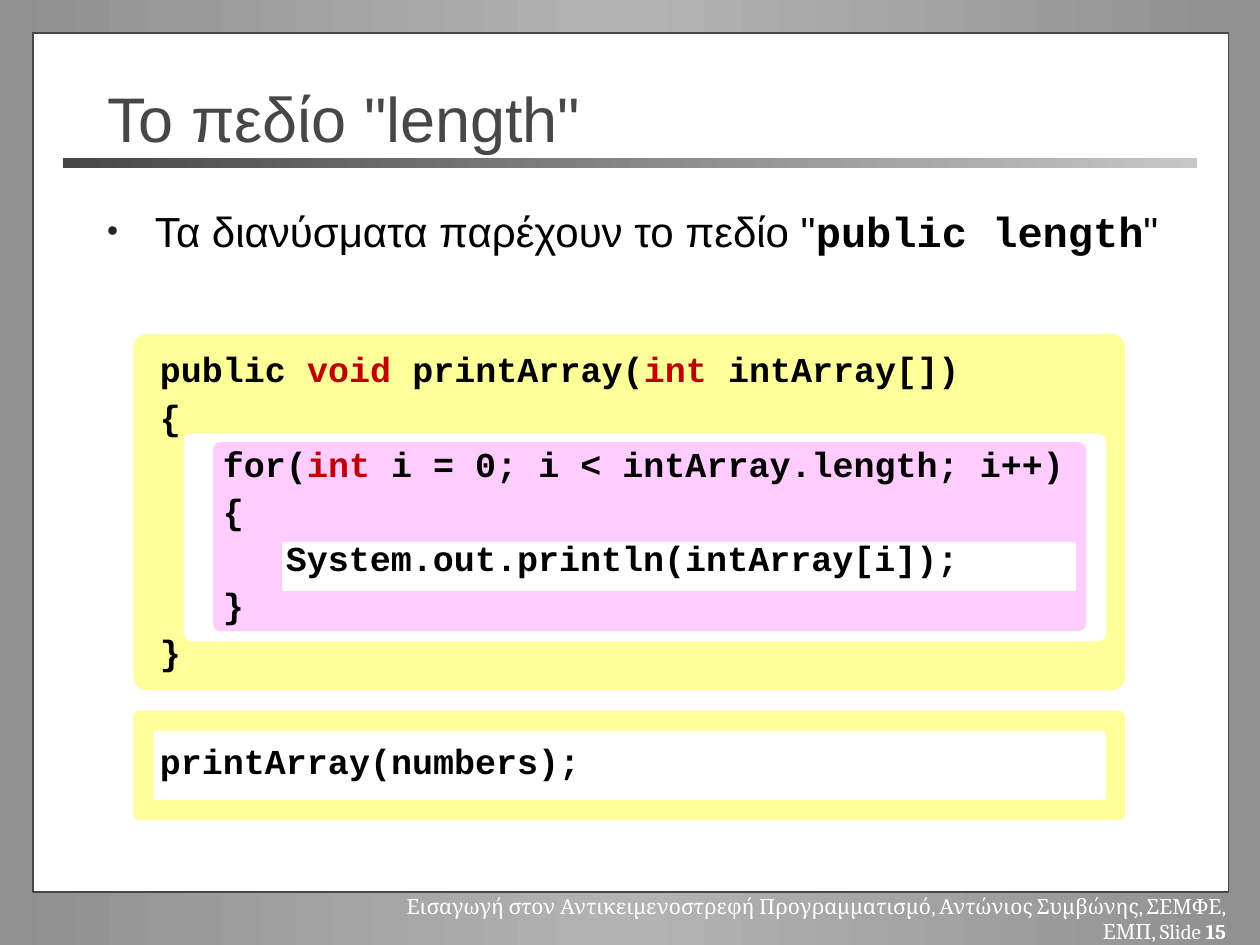
import copy
import pptx
import pptx.util
import pptx.dml.color
import pptx.enum.shapes
import pptx.enum.text
import pptx.oxml.ns
import lxml.etree

Inches = pptx.util.Inches
Pt = pptx.util.Pt
RGBColor = pptx.dml.color.RGBColor
SHAPES = pptx.enum.shapes.MSO_SHAPE
ALIGN = pptx.enum.text.PP_ALIGN
ANCHOR = pptx.enum.text.MSO_ANCHOR
AUTO_SIZE = pptx.enum.text.MSO_AUTO_SIZE

WHITE = RGBColor(0xFF, 0xFF, 0xFF)
BLACK = RGBColor(0, 0, 0)
DARK = RGBColor(0x47, 0x47, 0x47)
EDGE = RGBColor(0x90, 0x90, 0x90)
MIDDLE = RGBColor(0xB3, 0xB3, 0xB3)
PALE = RGBColor(0xC6, 0xC6, 0xC6)
YELLOW = RGBColor(0xFF, 0xFF, 0x99)
PINK = RGBColor(0xFF, 0xCC, 0xFF)
RED = RGBColor(0xC0, 0, 0)

TITLE = 'Το πεδίο "length"'
BULLET = [('Τα διανύσματα παρέχουν το πεδίο "', "Arial", False),
          ("public length", "Courier New", True),
          ('"', "Arial", False)]
FOOTER = ("Εισαγωγή στον Αντικειμενοστρεφή Προγραμματισμό, "
          "Αντώνιος Συμβώνης, ΣΕΜΦΕ, ΕΜΠ, Slide ")
SLIDE_NUMBER = "15"
METHOD = [
    (0, ["public ", "void ", "printArray(", "int ", "intArray[])"]),
    (0, ["{"]),
    (1, ["for(", "int ", "i = 0; i < intArray.length; i++)"]),
    (1, ["{"]),
    (2, ["System.out.println(intArray[i]);"]),
    (1, ["}"]),
    (0, ["}"]),
]
CALL = [(0, ["printArray(numbers);"])]
TYPE_WORDS = {"void ", "int "}
PANELS = [
    ((1.06, 5.64, 7.87, 0.87), 0.06, YELLOW),
    ((1.22, 5.8, 7.56, 0.55), 0.04, WHITE),
    ((1.06, 2.65, 7.87, 2.83), 0.04, YELLOW),
    ((1.46, 3.44, 7.32, 1.65), 0.04, WHITE),
    ((1.69, 3.51, 6.93, 1.5), 0.04, PINK),
    ((2.24, 4.3, 6.3, 0.39), 0.04, WHITE),
]
INDENT = 0.5


def box(numbers):
    return [Inches(number) for number in numbers]


def place(shape, numbers):
    shape.left, shape.top, shape.width, shape.height = box(numbers)


def add_panel(slide, kind, numbers, color):
    shape = slide.shapes.add_shape(kind, *box(numbers))
    shape.shadow.inherit = False
    shape.fill.solid()
    shape.fill.fore_color.rgb = color
    shape.line.fill.background()
    return shape


def set_gradient(fill, first, last):
    fill.gradient()
    fill.gradient_angle = 0
    for stop, color, position in zip(fill.gradient_stops, (first, last), (0, 1)):
        stop.color.rgb = color
        stop.position = position


def set_font(font, name, size, color, bold=False):
    font.name, font.size, font.bold = name, Pt(size), bold
    font.color.rgb = color


def set_indent(paragraph, left, first=0):
    properties = paragraph._p.get_or_add_pPr()
    properties.set("marL", str(Inches(left)))
    properties.set("indent", str(Inches(first)))
    return properties


def add_text_box(slide, numbers):
    frame = slide.shapes.add_textbox(*box(numbers)).text_frame
    frame.word_wrap = True
    return frame


def add_code(slide, numbers, lines):
    frame = add_text_box(slide, numbers)
    for index, (level, pieces) in enumerate(lines):
        paragraph = frame.add_paragraph() if index else frame.paragraphs[0]
        paragraph.line_spacing = 0.9
        paragraph.space_before = Pt(5.3)
        set_indent(paragraph, level * INDENT)
        set_font(paragraph.font, "Courier New", 20, BLACK, True)
        for piece in pieces:
            run = paragraph.add_run()
            run.text = piece
            if piece in TYPE_WORDS:
                run.font.color.rgb = RED


def add_background(slide):
    fill = slide.background.fill
    set_gradient(fill, EDGE, EDGE)
    stops = slide.background._cSld.find(".//" + pptx.oxml.ns.qn("a:gsLst"))
    stops.insert(1, copy.deepcopy(stops[0]))
    middle = fill.gradient_stops[1]
    middle.position = 0.5
    middle.color.rgb = MIDDLE


def add_title(slide):
    title = slide.shapes.title
    place(title, (0.75, 0.62, 8.5, 0.62))
    title.text_frame.text = TITLE
    title.text_frame.auto_size = AUTO_SIZE.NONE
    title.text_frame.vertical_anchor = ANCHOR.MIDDLE
    paragraph = title.text_frame.paragraphs[0]
    paragraph.alignment = ALIGN.LEFT
    set_font(paragraph.font, "Arial", 36, DARK)


def add_bullet(slide):
    body = slide.placeholders[1]
    place(body, (0.75, 1.58, 8.75, 0.75))
    body.text_frame.auto_size = AUTO_SIZE.NONE
    paragraph = body.text_frame.paragraphs[0]
    paragraph.space_before = Pt(5)
    properties = set_indent(paragraph, 0.38, -0.38)
    color = lxml.etree.SubElement(properties, pptx.oxml.ns.qn("a:buClr"))
    lxml.etree.SubElement(color, pptx.oxml.ns.qn("a:srgbClr"), val="232323")
    lxml.etree.SubElement(properties, pptx.oxml.ns.qn("a:buSzPct"), val="75000")
    lxml.etree.SubElement(properties, pptx.oxml.ns.qn("a:buChar"), char="•")
    for text, name, bold in BULLET:
        run = paragraph.add_run()
        run.text = text
        set_font(run.font, name, 24, BLACK, bold)


def add_footer(slide):
    paragraph = add_text_box(slide, (2.83, 7.04, 7, 0.3)).paragraphs[0]
    paragraph.alignment = ALIGN.RIGHT
    set_font(paragraph.font, "Cambria", 12, WHITE)
    paragraph.add_run().text = FOOTER
    number = paragraph.add_run()
    number.text = SLIDE_NUMBER
    number.font.bold = True


def main():
    presentation = pptx.Presentation()
    presentation.slide_width, presentation.slide_height = box((10, 7.5))
    slide = presentation.slides.add_slide(presentation.slide_layouts[1])
    add_background(slide)
    page = add_panel(slide, SHAPES.RECTANGLE, (0.26, 0.26, 9.49, 6.82), WHITE)
    page.line.color.rgb = DARK
    page.line.width = Pt(1)
    rule = add_panel(slide, SHAPES.RECTANGLE, (0.5, 1.25, 9, 0.08), DARK)
    set_gradient(rule.fill, DARK, PALE)
    add_footer(slide)
    for numbers, rounding, color in PANELS:
        panel = add_panel(slide, SHAPES.ROUNDED_RECTANGLE, numbers, color)
        panel.adjustments[0] = rounding
    for placeholder in list(slide.placeholders):
        slide.shapes._spTree.append(placeholder._element)
    add_title(slide)
    add_bullet(slide)
    add_code(slide, (1.17, 2.75, 7.42, 2.61), METHOD)
    add_code(slide, (1.17, 5.86, 7.42, 0.41), CALL)
    presentation.save("out.pptx")


if __name__ == "__main__":
    main()
